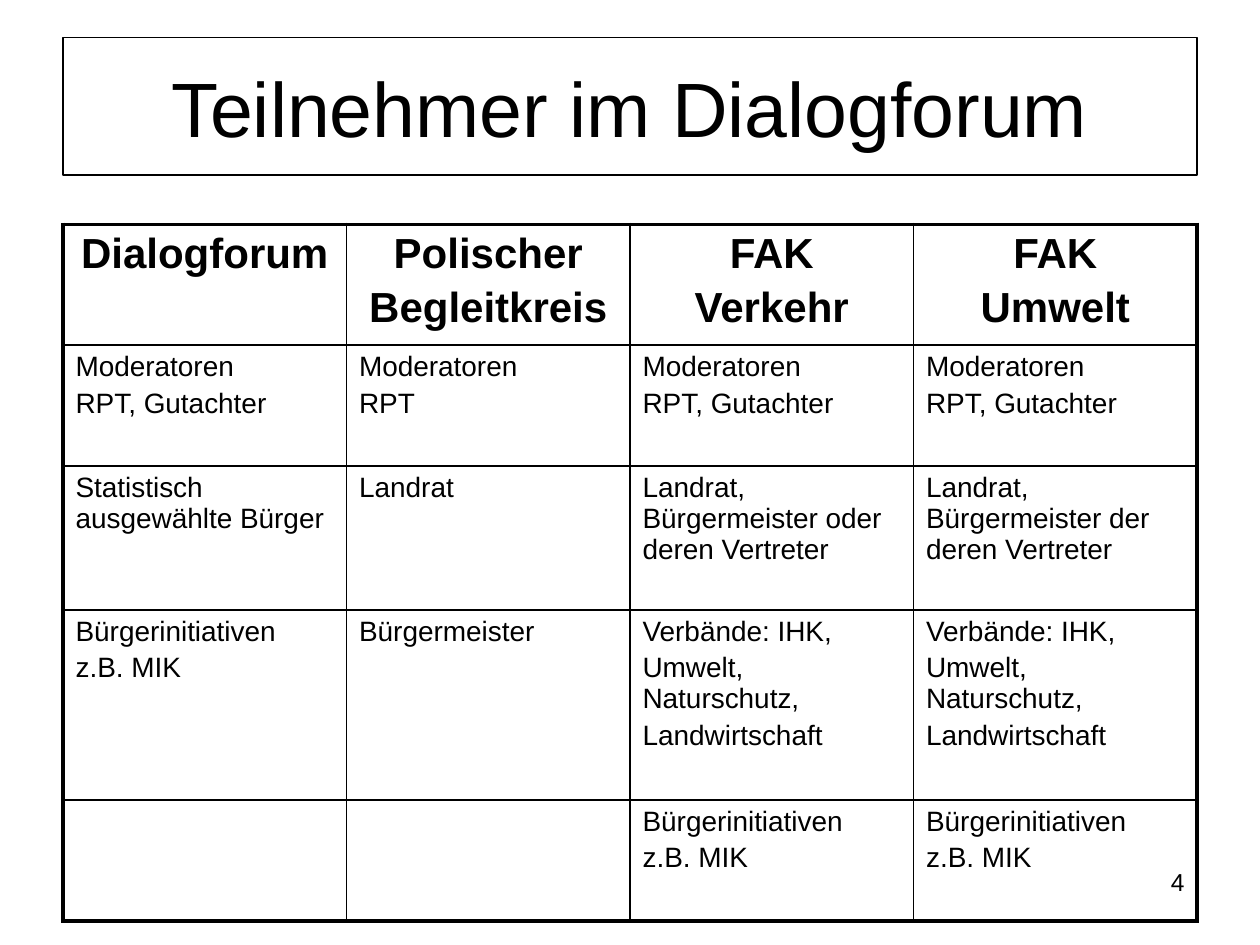
from dataclasses import dataclass

from lxml import etree
from pptx import Presentation
from pptx.dml.color import RGBColor
from pptx.enum.text import MSO_ANCHOR, MSO_AUTO_SIZE, PP_ALIGN
from pptx.oxml.ns import qn
from pptx.util import Pt

LEFT, CENTER, RIGHT = PP_ALIGN.LEFT, PP_ALIGN.CENTER, PP_ALIGN.RIGHT
TOP, MIDDLE = MSO_ANCHOR.TOP, MSO_ANCHOR.MIDDLE
TITLE_ONLY = 5
EMU_PER_PX = 9144  # 100 px to the inch


@dataclass(frozen=True)
class Theme:
    font: str = "Arial"
    ink: str = "000000"
    title_size: int = 44
    header_size: int = 24
    body_size: int = 16
    number_size: int = 14
    title_line: float = 0.75
    inner_line: float = 1
    outer_line: float = 2.25


@dataclass(frozen=True)
class Box:
    left: int
    top: int
    width: int
    height: int

    def emu(self) -> tuple[int, ...]:
        return tuple(px(v) for v in (self.left, self.top, self.width, self.height))


@dataclass(frozen=True)
class Row:
    height: int
    cells: tuple[str, ...]  # line feeds part the paragraphs


THEME = Theme()
INK = RGBColor.from_string(THEME.ink)
TITLE_BOX = Box(50, 30, 900, 109)
TABLE_BOX = Box(50, 178, 900, 553)
NUMBER_BOX = Box(717, 683, 233, 52)

MODERATORS = "Moderatoren\nRPT, Gutachter"
INITIATIVES = "Bürgerinitiativen\nz.B. MIK"
ASSOCIATIONS = "Verbände: IHK,\nUmwelt, Naturschutz,\nLandwirtschaft"
ROWS = (
    Row(96, ("Dialogforum", "Polischer\nBegleitkreis", "FAK\nVerkehr", "FAK\nUmwelt")),
    Row(96, (MODERATORS, "Moderatoren\nRPT", MODERATORS, MODERATORS)),
    Row(114, ("Statistisch ausgewählte Bürger", "Landrat",
              "Landrat, Bürgermeister oder deren Vertreter",
              "Landrat, Bürgermeister der deren Vertreter")),
    Row(151, (INITIATIVES, "Bürgermeister", ASSOCIATIONS, ASSOCIATIONS)),
    Row(96, ("", "", INITIATIVES, INITIATIVES)),
)


def px(value: int) -> int:
    return value * EMU_PER_PX


def write_text(frame, text: str, size: int, align, bold: bool = False,
               space_before: int = 0) -> None:
    frame.word_wrap = True
    frame.text = text
    for paragraph in frame.paragraphs:
        paragraph.alignment = align
        paragraph.space_before = Pt(space_before)
        paragraph.font.name = THEME.font
        paragraph.font.size = Pt(size)
        paragraph.font.bold = bold
        paragraph.font.color.rgb = INK


def set_borders(cell, widths: dict[str, float]) -> None:
    properties = cell._tc.get_or_add_tcPr()
    for index, (side, width) in enumerate(widths.items()):
        line = etree.Element(qn(f"a:ln{side}"), w=str(int(Pt(width))))
        fill = etree.SubElement(line, qn("a:solidFill"))
        etree.SubElement(fill, qn("a:srgbClr"), val=THEME.ink)
        properties.insert(index, line)  # borders stand before the fill


def add_title(slide) -> None:
    title = slide.shapes.title
    title.left, title.top, title.width, title.height = TITLE_BOX.emu()
    title.line.color.rgb = INK
    title.line.width = Pt(THEME.title_line)
    title.text_frame.auto_size = MSO_AUTO_SIZE.NONE
    title.text_frame.vertical_anchor = MIDDLE
    write_text(title.text_frame, "Teilnehmer im Dialogforum", THEME.title_size, CENTER)


def add_page_number(slide) -> None:
    number = slide.shapes.add_textbox(*NUMBER_BOX.emu())
    number.text_frame.vertical_anchor = TOP
    write_text(number.text_frame, "4", THEME.number_size, RIGHT)


def add_participants(slide) -> None:
    column_count = len(ROWS[0].cells)
    last_row, last_column = len(ROWS) - 1, column_count - 1
    frame = slide.shapes.add_table(len(ROWS), column_count, *TABLE_BOX.emu())
    table = frame.table
    table.first_row = table.horz_banding = False
    for column in table.columns:
        column.width = px(TABLE_BOX.width // column_count)

    def line_width(is_outer: bool) -> float:
        return THEME.outer_line if is_outer else THEME.inner_line

    for r, row in enumerate(ROWS):
        table.rows[r].height = px(row.height)
        for c, text in enumerate(row.cells):
            cell = table.cell(r, c)
            cell.fill.background()
            cell.vertical_anchor = TOP
            if r == 0:
                write_text(cell.text_frame, text, THEME.header_size, CENTER, True, 4)
            else:
                write_text(cell.text_frame, text, THEME.body_size, LEFT, False, 3)
            set_borders(cell, {
                "L": line_width(c == 0),
                "R": line_width(c == last_column),
                "T": line_width(r == 0),
                "B": line_width(r == last_row),
            })


def main() -> None:
    presentation = Presentation()
    presentation.slide_width = px(1000)
    presentation.slide_height = px(750)
    slide = presentation.slides.add_slide(presentation.slide_layouts[TITLE_ONLY])
    add_page_number(slide)
    add_title(slide)
    add_participants(slide)
    presentation.save("out.pptx")


if __name__ == "__main__":
    main()
